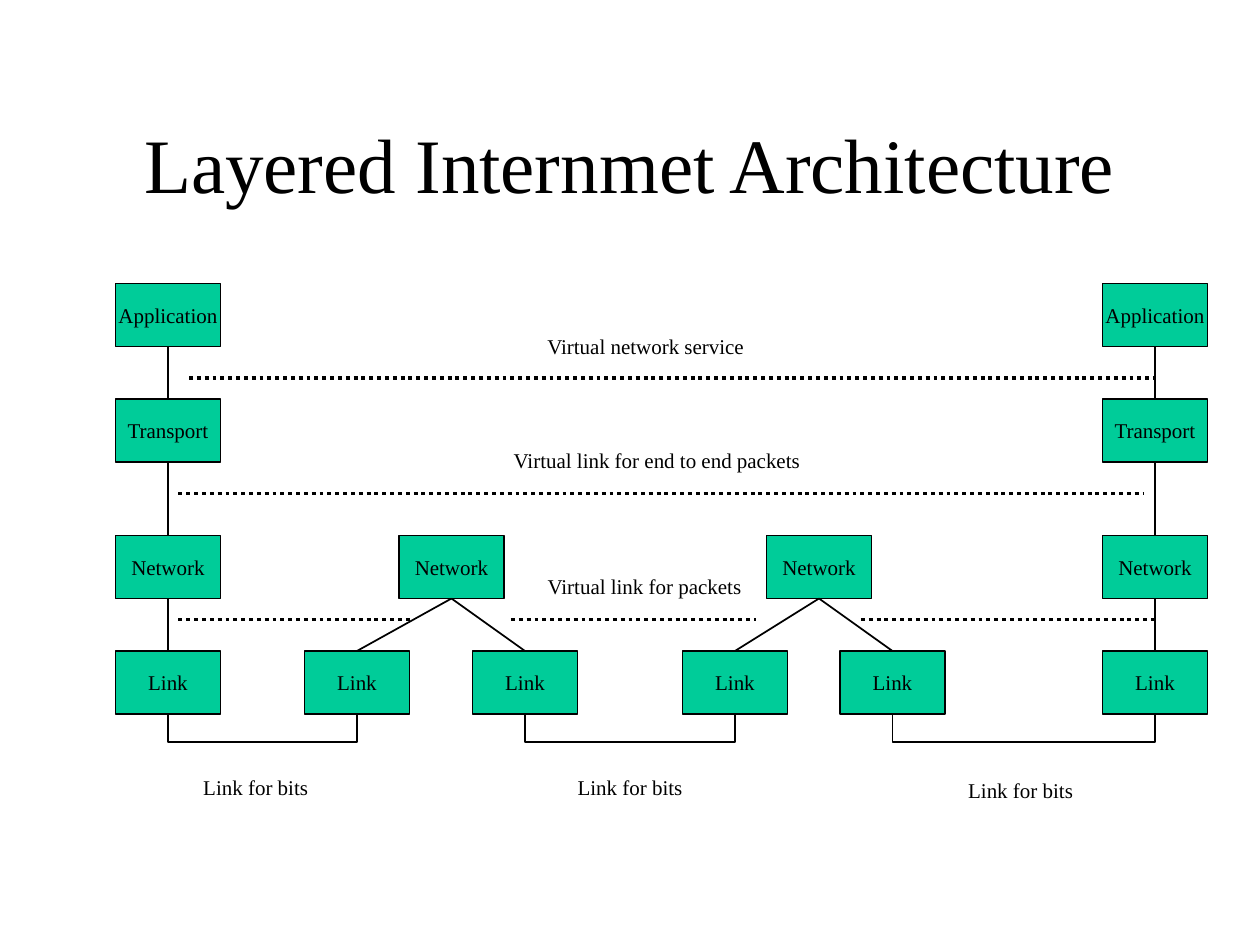
from lxml import etree
from pptx import Presentation
from pptx.dml.color import RGBColor
from pptx.enum import dml, shapes, text
from pptx.oxml.ns import qn
from pptx.util import Pt

colour = RGBColor.from_string
BLACK, GREEN = "000000", "00CC99"
BOX_W, BOX_H = 60, 36


def write(frame, words, size=12, anchor=text.MSO_ANCHOR.MIDDLE, wrap=False):
    frame.word_wrap = wrap
    frame.vertical_anchor = anchor
    paragraph = frame.paragraphs[0]
    paragraph.text = words
    paragraph.alignment = text.PP_ALIGN.CENTER
    paragraph.font.name = "Times New Roman"
    paragraph.font.size = Pt(size)
    paragraph.font.color.rgb = colour(BLACK)


def draw_line(x1, y1, x2, y2, width=1, dash=None):
    line = slide.shapes.add_connector(
        shapes.MSO_CONNECTOR.STRAIGHT, Pt(x1), Pt(y1), Pt(x2), Pt(y2))
    line.line.color.rgb = colour(BLACK)
    line.line.width = Pt(width)
    line.line.dash_style = dash
    etree.SubElement(line._element.spPr, qn("a:effectLst"))


deck = Presentation()
deck.slide_width, deck.slide_height = Pt(720), Pt(540)
slide = deck.slides.add_slide(deck.slide_layouts[5])

title = slide.shapes.title
title.left, title.top, title.width, title.height = Pt(54), Pt(48), Pt(612), Pt(90)
write(title.text_frame, "Layered Internmet Architecture", size=44, wrap=True)

# Each layer: name, top, centres of its boxes
host_centres = [96, 660]
router_centres = [258, 468]
link_centres = [96, 204, 300, 420, 510, 660]
layers = [
    ("Application", 162, host_centres),
    ("Transport", 228, host_centres),
    ("Network", 306, host_centres + router_centres),
    ("Link", 372, link_centres),
]
for name, top, centres in layers:
    for centre in centres:
        box = slide.shapes.add_shape(
            shapes.MSO_SHAPE.RECTANGLE,
            Pt(centre - BOX_W / 2), Pt(top), Pt(BOX_W), Pt(BOX_H))
        box.shadow.inherit = False
        box.fill.solid()
        box.fill.fore_color.rgb = colour(GREEN)
        box.line.color.rgb = colour(BLACK)
        box.line.width = Pt(1)
        write(box.text_frame, name)

# Host stacks run straight down; each router joins two links
for (_, upper, _), (_, lower, _) in zip(layers, layers[1:]):
    for centre in host_centres:
        draw_line(centre, lower, centre, upper + BOX_H)
network_top, link_top = layers[2][1], layers[3][1]
for i, link in enumerate(link_centres[1:-1]):
    draw_line(link, link_top, router_centres[i // 2], network_top + BOX_H)

# Virtual links between peers
for start, end, y in [(108, 660, 216), (102, 654, 282), (102, 234, 354),
                      (292, 432, 354), (492, 660, 354)]:
    draw_line(start, y, end, y, width=2.25, dash=dml.MSO_LINE.ROUND_DOT)

# Physical links under each pair of link boxes
link_bottom, wire_y = link_top + BOX_H, 424
for start, end in zip(link_centres[::2], link_centres[1::2]):
    outline = slide.shapes.build_freeform(Pt(start), Pt(link_bottom))
    outline.add_line_segments(
        [(Pt(start), Pt(wire_y)), (Pt(end), Pt(wire_y)), (Pt(end), Pt(link_bottom))],
        close=False)
    wire = outline.convert_to_shape()
    wire.shadow.inherit = False
    wire.fill.background()
    wire.line.color.rgb = colour(BLACK)
    wire.line.width = Pt(1)

for caption, left, top, width in [
    ("Virtual network service", 305, 187.2, 128),
    ("Virtual link for end to end packets", 285.8, 252, 179.3),
    ("Virtual link for packets", 305, 324, 126.7),
    ("Link for bits", 108.7, 439.2, 74.9),
    ("Link for bits", 322.6, 439.2, 74.9),
    ("Link for bits", 545.8, 440.6, 74.9),
]:
    label = slide.shapes.add_textbox(Pt(left), Pt(top), Pt(width), Pt(21.6))
    write(label.text_frame, caption, anchor=text.MSO_ANCHOR.TOP)

deck.save("out.pptx")
